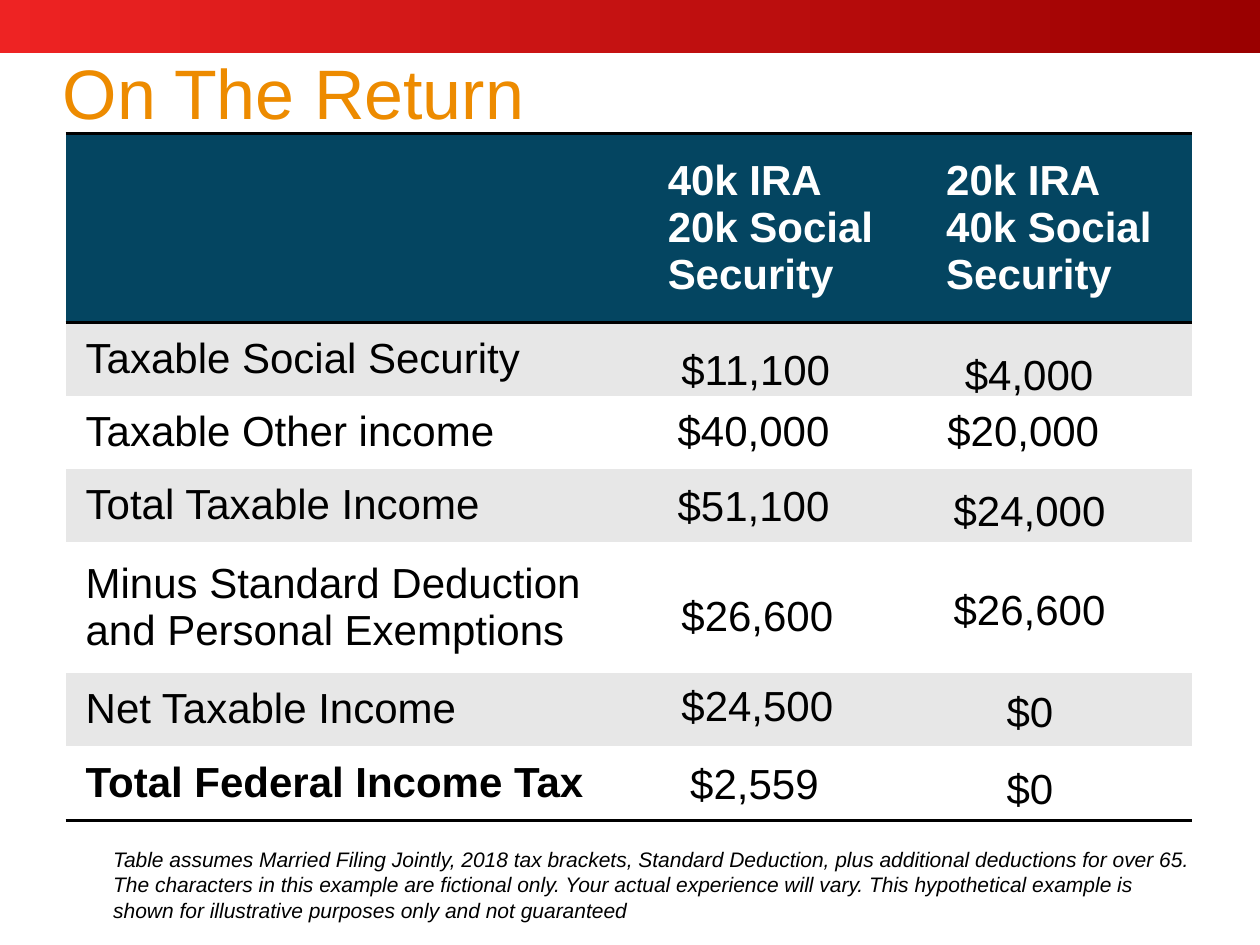
from dataclasses import dataclass

from lxml.etree import SubElement
from pptx import Presentation
from pptx.dml.color import RGBColor
from pptx.enum.shapes import MSO_SHAPE
from pptx.enum.text import MSO_ANCHOR, MSO_AUTO_SIZE
from pptx.oxml.ns import qn
from pptx.util import Inches, Pt


@dataclass(frozen=True)
class Theme:
    """Colours, font and type sizes of the slide."""
    font: str = "Arial"
    banner_start: str = "EE2323"
    banner_end: str = "9A0000"
    title_color: str = "ED8B00"
    header: str = "044561"
    band: str = "E7E7E7"
    white: str = "FFFFFF"
    black: str = "000000"
    title_size: int = 40
    body_size: int = 24
    note_size: int = 12
    rule_width: int = 2


THEME = Theme()
NO_GRID_STYLE = "{2D5ABB26-0587-4C30-8999-92F81FD0307C}"
COLUMN_WIDTHS = [4.62, 2.21, 2.11]
ROW_HEIGHTS = [1.5, 0.58, 0.58, 0.58, 1.04, 0.58, 0.59]
HEADERS = [
    [],
    ["40k IRA", "20k Social Security"],
    ["20k IRA", "40k Social Security"],
]
ROW_LABELS = [
    "Taxable Social Security",
    "Taxable Other income",
    "Total Taxable Income",
    "Minus Standard Deduction and Personal Exemptions",
    "Net Taxable Income",
    "Total Federal Income Tax",
]
AMOUNTS = [
    ("$11,100", 5.31, 2.68, 1.4),
    ("$40,000", 5.28, 3.16, 1.42),
    ("$51,100", 5.28, 3.76, 1.42),
    ("$26,600", 5.31, 4.63, 1.42),
    ("$24,500", 5.31, 5.34, 1.42),
    ("$2,559", 5.38, 5.96, 1.23),
    ("$4,000", 7.56, 2.72, 1.23),
    ("$20,000", 7.42, 3.16, 1.42),
    ("$24,000", 7.47, 3.8, 1.42),
    ("$26,600", 7.47, 4.58, 1.42),
    ("$0", 7.89, 5.39, 0.58),
    ("$0", 7.89, 6, 0.58),
]
NOTES = [
    "Table assumes Married Filing Jointly, 2018 tax brackets, Standard Deduction, "
    "plus additional deductions for over 65.",
    "The characters in this example are fictional only. Your actual experience will vary. "
    "This hypothetical example is shown for illustrative purposes only and not guaranteed",
]


def apply_format(target, values):
    """Set each named attribute on the target."""
    for name, value in values.items():
        setattr(target, name, value)


def write_paragraphs(text_frame, lines, size, color, line_spacing=None, **font_values):
    """Write one formatted paragraph per line."""
    for index, line in enumerate(lines):
        paragraph = text_frame.add_paragraph() if index else text_frame.paragraphs[0]
        paragraph.line_spacing = line_spacing
        run = paragraph.add_run()
        run.text = line
        apply_format(run.font, {"name": THEME.font, "size": Pt(size), **font_values})
        run.font.color.rgb = RGBColor.from_string(color)


def add_banner(slide):
    """Draw the gradient strip across the top."""
    shape = slide.shapes.add_shape(MSO_SHAPE.RECTANGLE, 0, 0, Inches(10), Inches(0.42))
    shape.shadow.inherit = False
    shape.line.fill.background()
    shape.fill.gradient()
    shape.fill.gradient_angle = 0
    for stop, color in zip(shape.fill.gradient_stops, (THEME.banner_start, THEME.banner_end)):
        stop.color.rgb = RGBColor.from_string(color)


def add_text(slide, box, lines, size, color, frame_values, **text_values):
    """Add a text box with formatted paragraphs."""
    shape = slide.shapes.add_textbox(*map(Inches, box))
    apply_format(shape.text_frame, frame_values)
    write_paragraphs(shape.text_frame, lines, size, color, **text_values)


def add_rules(cell, sides):
    """Draw horizontal rules on the given sides of a cell."""
    properties = cell._tc.get_or_add_tcPr()
    for side in sides:
        line = SubElement(properties, qn(f"a:ln{side}"), w=str(Pt(THEME.rule_width)))
        fill = SubElement(line, qn("a:solidFill"))
        SubElement(fill, qn("a:srgbClr"), val=THEME.black)


def format_cell(cell, fill, sides):
    """Set the margins, rules and fill of a cell."""
    apply_format(cell, {
        "vertical_anchor": MSO_ANCHOR.MIDDLE,
        "margin_left": Inches(0.16),
        "margin_right": Inches(0.16),
        "margin_top": Inches(0.05),
        "margin_bottom": Inches(0.05),
    })
    add_rules(cell, sides)
    cell.fill.solid()
    cell.fill.fore_color.rgb = RGBColor.from_string(fill)


def add_tax_table(slide):
    """Add the banded table with its headings and row labels."""
    frame = slide.shapes.add_table(
        len(ROW_HEIGHTS), len(COLUMN_WIDTHS), Inches(0.52), Inches(1.06),
        Inches(sum(COLUMN_WIDTHS)), Inches(sum(ROW_HEIGHTS)))
    table = frame.table
    apply_format(table, {"first_row": False, "horz_banding": False})
    for style in frame.element.iter(qn("a:tableStyleId")):
        style.text = NO_GRID_STYLE
    for column, width in zip(table.columns, COLUMN_WIDTHS):
        column.width = Inches(width)
    last = len(ROW_HEIGHTS) - 1
    for index, (row, height) in enumerate(zip(table.rows, ROW_HEIGHTS)):
        row.height = Inches(height)
        fill = THEME.header if index == 0 else THEME.band if index % 2 else THEME.white
        sides = {0: "TB", last: "B"}.get(index, "")
        for cell in row.cells:
            format_cell(cell, fill, sides)
    for column, lines in enumerate(HEADERS):
        write_paragraphs(table.cell(0, column).text_frame, lines,
                         THEME.body_size, THEME.white, bold=True)
    for index, label in enumerate(ROW_LABELS, start=1):
        write_paragraphs(table.cell(index, 0).text_frame, [label],
                         THEME.body_size, THEME.black, bold=index == last)


def main():
    """Build and save the slide."""
    presentation = Presentation()
    apply_format(presentation, {"slide_width": Inches(10), "slide_height": Inches(7.5)})
    slide = presentation.slides.add_slide(presentation.slide_layouts[6])
    add_banner(slide)
    add_text(slide, (0.4, 0.4, 9.59, 0.73), ["On The Return"], THEME.title_size,
             THEME.title_color, {"word_wrap": True, "vertical_anchor": MSO_ANCHOR.MIDDLE},
             line_spacing=0.9)
    add_tax_table(slide)
    add_text(slide, (0.8, 6.67, 8.8, 0.71), NOTES, THEME.note_size, THEME.black,
             {"word_wrap": True, "auto_size": MSO_AUTO_SIZE.SHAPE_TO_FIT_TEXT}, italic=True)
    for amount, left, top, width in AMOUNTS:
        add_text(slide, (left, top, width, 0.5), [amount], THEME.body_size, THEME.black,
                 {"word_wrap": False, "auto_size": MSO_AUTO_SIZE.SHAPE_TO_FIT_TEXT})
    presentation.save("out.pptx")


if __name__ == "__main__":
    main()
